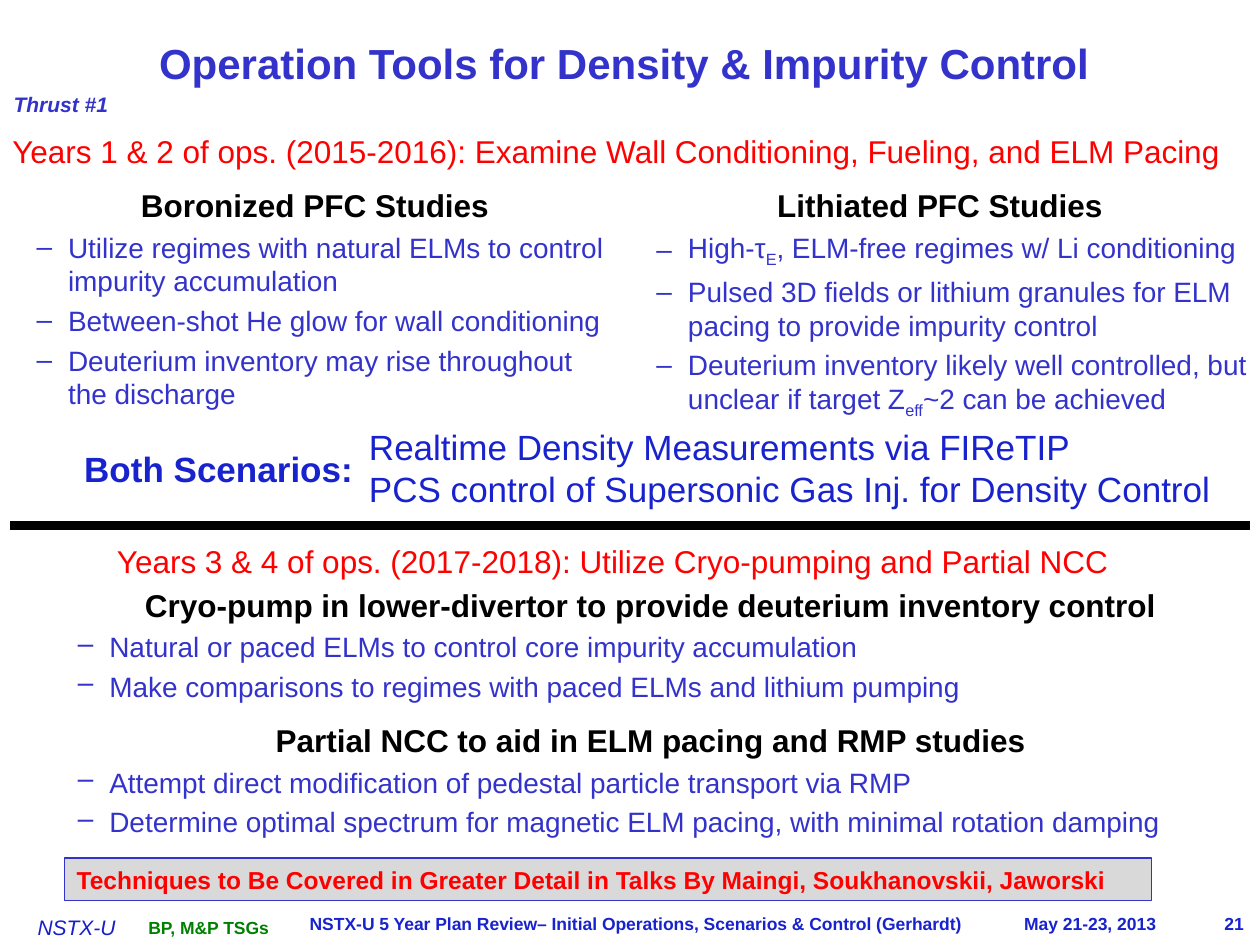
from lxml.etree import SubElement
from pptx import Presentation
from pptx.dml.color import RGBColor
from pptx.enum.shapes import MSO_CONNECTOR, MSO_SHAPE
from pptx.enum.text import MSO_ANCHOR, MSO_AUTO_SIZE, PP_ALIGN
from pptx.oxml.ns import qn
from pptx.util import Inches, Pt

BLUE, DEEP, RED, BLACK = "3333CC", "1822CD", "FF0000", "000000"
GREEN, GRAY = "008000", "D9D9D9"
FONT = "Arial"
WIDTH, HEIGHT = 10, 7.5

# Content: a list entry is (heading, bullets); "_x_" marks a subscript
TITLE = "Operation Tools for Density & Impurity Control "
BORONIZED = [("Boronized PFC Studies", [
    "Utilize regimes with natural ELMs to control impurity accumulation",
    "Between-shot He glow for wall conditioning",
    "Deuterium inventory may rise throughout the discharge"])]
LITHIATED = [("Lithiated PFC Studies", [
    "High-τ_E_, ELM-free regimes w/ Li conditioning",
    "Pulsed 3D fields or lithium granules for ELM pacing to provide impurity control",
    "Deuterium inventory likely well controlled, but unclear if target Z_eff_~2 can be achieved"])]
LATER_YEARS = [
    ("Cryo-pump in lower-divertor to provide deuterium inventory control", [
        "Natural or paced ELMs to control core impurity accumulation",
        "Make comparisons to regimes with paced ELMs and lithium pumping"]),
    ("Partial NCC to aid in ELM pacing and RMP studies", [
        "Attempt direct modification of pedestal particle transport via RMP",
        "Determine optimal spectrum for magnetic ELM pacing, with minimal rotation damping"])]
BANNER = "Techniques to Be Covered in Greater Detail in Talks By Maingi, Soukhanovskii, Jaworski"
FOOTER = ["NSTX-U 5 Year Plan Review– Initial Operations, Scenarios & Control (Gerhardt)",
          "May 21-23, 2013", "21"]
FOOTER_TABS = [5.67, 7.26]

# Labels: box, lines, size, colour, bold, italic
LABELS = [
    ((0.01, 0.68, 1.02, 0.31), ["Thrust #1"], 12, BLUE, True, True),
    ((0, 1, WIDTH, 0.41),
     ["Years 1 & 2 of ops. (2015-2016): Examine Wall Conditioning, Fueling, and ELM Pacing"],
     18, RED, False, False),
    ((0.57, 3.5, 2.43, 0.44), ["Both Scenarios:"], 20, DEEP, True, False),
    ((2.83, 3.33, 7.01, 0.77),
     ["Realtime Density Measurements via FIReTIP",
      "PCS control of Supersonic Gas Inj. for Density Control"], 20, DEEP, False, False),
    ((0.83, 4.25, 8.37, 0.41),
     ["Years 3 & 4 of ops. (2017-2018): Utilize Cryo-pumping and Partial NCC"],
     18, RED, False, False),
    ((0.2, 7.21, 1, 0.28), ["NSTX-U"], 12, "171FC7", False, True),
    ((1.08, 7.23, 1.17, 0.27), ["BP, M&P TSGs"], 10, GREEN, True, False),
]


def rgb(color):
    return RGBColor.from_string(color)


def place(shape, box):
    shape.left, shape.top, shape.width, shape.height = map(Inches, box)
    return shape


def add_run(paragraph, text, size, color, bold=False, italic=False):
    run = paragraph.add_run()
    run.text = text
    font = run.font
    font.name, font.size, font.bold, font.italic = FONT, Pt(size), bold, italic
    font.color.rgb = rgb(color)
    return run


def next_paragraph(frame):
    first = frame.paragraphs[0]
    return frame.add_paragraph() if first.runs else first


def set_bullet(paragraph, char=None):
    props = paragraph._p.get_or_add_pPr()
    props.set("marL", str(Inches(0.44) if char else 0))
    props.set("indent", str(Inches(-0.25) if char else 0))
    if char:
        SubElement(props, qn("a:buChar")).set("char", char)
    else:
        SubElement(props, qn("a:buNone"))


def fill_list(shape, groups):
    frame = shape.text_frame
    frame.word_wrap = True
    frame.auto_size = MSO_AUTO_SIZE.NONE
    for index, (heading, bullets) in enumerate(groups):
        paragraph = next_paragraph(frame)
        set_bullet(paragraph)
        paragraph.alignment = PP_ALIGN.CENTER
        paragraph.space_before = Pt(10.5 if index else 0)
        add_run(paragraph, heading, 18, BLACK, bold=True)
        for bullet in bullets:
            paragraph = next_paragraph(frame)
            paragraph.level = 1
            set_bullet(paragraph, "–")
            paragraph.space_before = Pt(3.5)
            for part, text in enumerate(bullet.split("_")):
                run = add_run(paragraph, text, 16, BLUE)
                if part % 2:
                    run._r.get_or_add_rPr().set("baseline", "-25000")


def add_label(slide, box, lines, size, color, bold, italic):
    frame = slide.shapes.add_textbox(*map(Inches, box)).text_frame
    frame.word_wrap = True
    for line in lines:
        add_run(next_paragraph(frame), line, size, color, bold, italic)
    return frame


def main():
    deck = Presentation()
    deck.slide_width, deck.slide_height = Inches(WIDTH), Inches(HEIGHT)
    slide = deck.slides.add_slide(deck.slide_layouts[3])
    title, boronized, lithiated = slide.placeholders

    # Title
    place(title, (0, 0, WIDTH, 1))
    title.text_frame.vertical_anchor = MSO_ANCHOR.MIDDLE
    heading = title.text_frame.paragraphs[0]
    heading.alignment = PP_ALIGN.CENTER
    add_run(heading, TITLE, 24, BLUE, bold=True)

    # Lists
    fill_list(place(boronized, (0, 1.43, 5, 2.42)), BORONIZED)
    fill_list(place(lithiated, (4.92, 1.43, 5.08, 2.42)), LITHIATED)
    later_box = map(Inches, (0.33, 4.6, 9.67, 2.42))
    fill_list(slide.shapes.add_textbox(*later_box), LATER_YEARS)

    # Labels
    for label in LABELS:
        add_label(slide, *label)

    # Divider between the two periods
    ends = map(Inches, (0.08, 4.17, WIDTH - 0.08, 4.17))
    divider = slide.shapes.add_connector(MSO_CONNECTOR.STRAIGHT, *ends)
    divider.line.color.rgb = rgb(BLACK)
    divider.line.width = Pt(5)
    SubElement(divider._element.spPr, qn("a:effectLst"))

    # Banner
    banner_box = map(Inches, (0.51, 6.81, 8.63, 0.34))
    banner = slide.shapes.add_shape(MSO_SHAPE.RECTANGLE, *banner_box)
    banner.shadow.inherit = False
    banner.fill.solid()
    banner.fill.fore_color.rgb = rgb(GRAY)
    banner.line.color.rgb = rgb(BLUE)
    banner.line.width = Pt(0.75)
    banner.text_frame.vertical_anchor = MSO_ANCHOR.MIDDLE
    message = banner.text_frame.paragraphs[0]
    message.alignment = PP_ALIGN.LEFT
    add_run(message, BANNER, 14, RED, bold=True)

    # Footer with tab stops for date and page number
    footer = add_label(slide, (2.36, 7.2, 7.64, 0.27), ["\t".join(FOOTER)],
                       10, DEEP, True, False)
    tabs = SubElement(footer.paragraphs[0]._p.get_or_add_pPr(), qn("a:tabLst"))
    for position in FOOTER_TABS:
        SubElement(tabs, qn("a:tab"), pos=str(Inches(position)), algn="l")

    deck.save("out.pptx")


if __name__ == "__main__":
    main()
